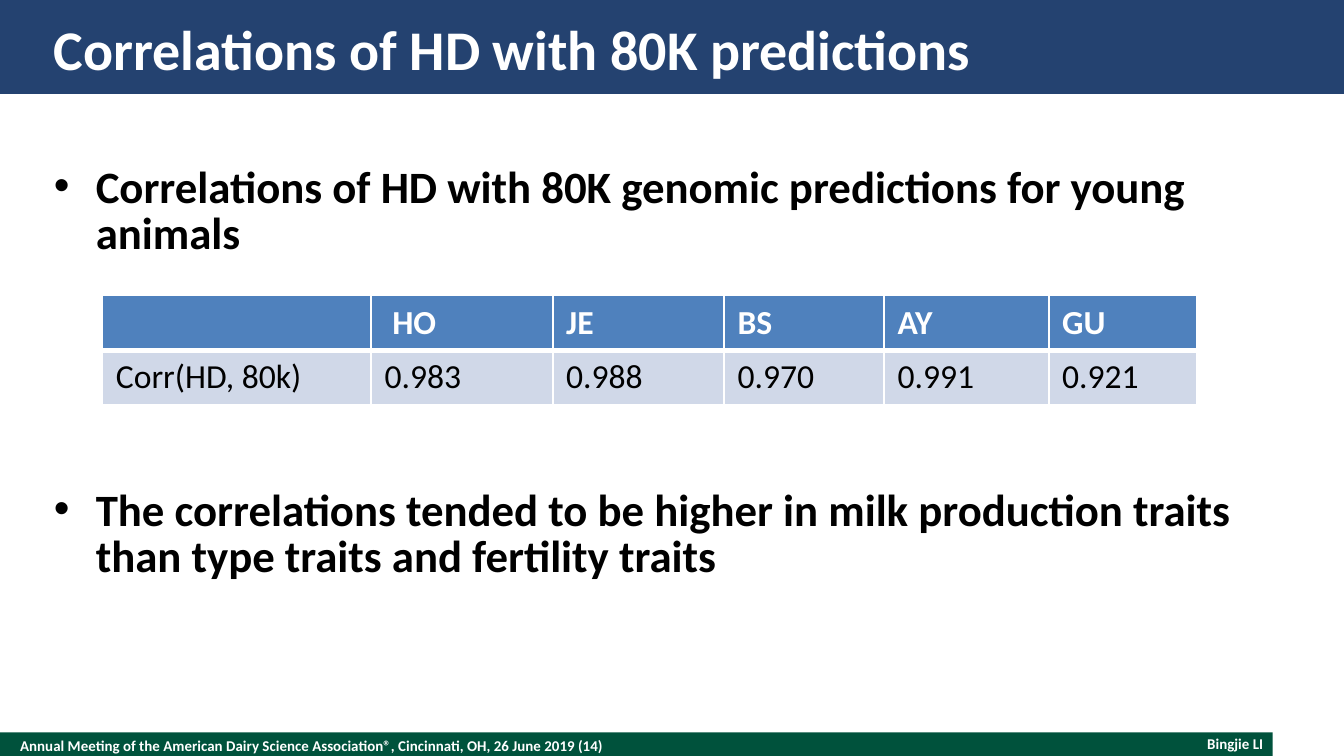
from lxml.etree import SubElement
from pptx import Presentation
from pptx.dml.color import RGBColor
from pptx.enum.shapes import MSO_SHAPE
from pptx.enum.text import MSO_ANCHOR, MSO_AUTO_SIZE, PP_ALIGN
from pptx.oxml.ns import qn
from pptx.util import Pt

COLORS = {
    "navy": "244270",
    "green": "00523C",
    "white": "FFFFFF",
    "black": "000000",
    "table_header": "4F81BD",
    "table_row": "D0D8E8",
}
TITLE = {"size": Pt(30), "bold": True, "color": "white"}
BULLET = {"size": Pt(24), "bold": True, "color": "black"}
FOOTER = {"size": Pt(8), "bold": True, "color": "white"}
HEADER_CELL = {"size": Pt(18), "bold": True, "color": "white"}
VALUE_CELL = {"size": Pt(18), "bold": False, "color": "black"}

COLUMN_WIDTHS = [144, 97.2, 91.8, 85.8, 88.2, 79.2]
ROWS = [
    ["", " HO", "JE", "BS", "AY", "GU"],
    ["Corr(HD, 80k)", "0.983", "0.988", "0.970", "0.991", "0.921"],
]
BULLETS = [
    "Correlations of HD with 80K genomic predictions for young animals",
    "The correlations tended to be higher in milk production traits "
    "than type traits and fertility traits",
]


def color(name):
    return RGBColor.from_string(COLORS[name])


def format_font(font, values):
    font.name = "Calibri"
    for name, value in values.items():
        if name == "color":
            font.color.rgb = color(value)
        else:
            setattr(font, name, value)


def place(shape, box):
    for name, value in zip(("left", "top", "width", "height"), box):
        setattr(shape, name, Pt(value))


def format_frame(frame, anchor):
    values = {
        "word_wrap": True, "auto_size": MSO_AUTO_SIZE.NONE, "vertical_anchor": anchor,
        "margin_left": 0, "margin_top": 0, "margin_right": 0, "margin_bottom": 0,
    }
    for name, value in values.items():
        setattr(frame, name, value)


def write_line(shape, text, values, alignment=PP_ALIGN.LEFT):
    format_frame(shape.text_frame, MSO_ANCHOR.MIDDLE)
    paragraph = shape.text_frame.paragraphs[0]
    paragraph.alignment = alignment
    run = paragraph.add_run()
    run.text = text
    format_font(run.font, values)


def add_bar(slide, box, fill):
    bar = slide.shapes.add_shape(MSO_SHAPE.RECTANGLE, *map(Pt, box))
    bar.shadow.inherit = False
    bar.fill.solid()
    bar.fill.fore_color.rgb = color(fill)
    bar.line.fill.background()


def bring_to_front(slide, shape):
    slide.shapes._spTree.append(shape._element)


def add_header(slide, box):
    left, top, width, height = box
    add_bar(slide, box, "navy")
    title = slide.shapes.title
    bring_to_front(slide, title)
    place(title, (left + 28.8, top + 7.2, width - 57.6, 37.4))
    write_line(title, "Correlations of HD with 80K predictions", TITLE)


def add_footer(slide, box):
    left, top, width, height = box
    add_bar(slide, box, "green")
    labels = [
        ("Annual Meeting of the American Dairy Science Association®, "
         "Cincinnati, OH, 26 June 2019 (14)",
         (left + 10.8, top, 468, height), PP_ALIGN.LEFT),
        ("Bingjie LI", (left + width - 163.4, top + 1.4, 158.4, 9.4), PP_ALIGN.RIGHT),
    ]
    for text, label_box, alignment in labels:
        label = slide.shapes.add_textbox(*map(Pt, label_box))
        write_line(label, text, FOOTER, alignment)


def add_bullets(slide, box):
    body = slide.placeholders[1]
    bring_to_front(slide, body)
    place(body, box)
    frame = body.text_frame
    format_frame(frame, MSO_ANCHOR.TOP)
    frame.text = "\n".join(BULLETS)
    for paragraph in frame.paragraphs:
        properties = paragraph._p.get_or_add_pPr()
        properties.set("marL", str(Pt(22.5)))
        properties.set("indent", str(Pt(-22.5)))
        SubElement(properties, qn("a:buChar"), char="•")
        paragraph.line_spacing = Pt(25)
        paragraph.space_before = Pt(0)
        format_font(paragraph.runs[0].font, BULLET)
    # Room for the table between the two bullets
    frame.paragraphs[0].space_after = Pt(123)


def add_borders(cell, bottom_width):
    properties = cell._tc.get_or_add_tcPr()
    for side, width in (("L", 1), ("R", 1), ("T", 1), ("B", bottom_width)):
        line = SubElement(properties, qn(f"a:ln{side}"), w=str(Pt(width)))
        fill = SubElement(line, qn("a:solidFill"))
        SubElement(fill, qn("a:srgbClr"), val=COLORS["white"])


def add_correlation_table(slide, box):
    table = slide.shapes.add_table(len(ROWS), len(COLUMN_WIDTHS), *map(Pt, box)).table
    for column, width in zip(table.columns, COLUMN_WIDTHS):
        column.width = Pt(width)
    styles = [("table_header", HEADER_CELL, 3), ("table_row", VALUE_CELL, 1)]
    for row_index, (fill, font, bottom_width) in enumerate(styles):
        for column_index, text in enumerate(ROWS[row_index]):
            cell = table.cell(row_index, column_index)
            cell.text = text
            format_font(cell.text_frame.paragraphs[0].font, font)
            for run in cell.text_frame.paragraphs[0].runs:
                format_font(run.font, font)
            add_borders(cell, bottom_width)
            cell.fill.solid()
            cell.fill.fore_color.rgb = color(fill)


def main():
    presentation = Presentation()
    presentation.slide_width, presentation.slide_height = Pt(720), Pt(405)
    slide = presentation.slides.add_slide(presentation.slide_layouts[1])
    add_footer(slide, (0, 392.4, 681.8, 14.4))
    add_header(slide, (0, 0, 720, 50.4))
    add_bullets(slide, (28.8, 88.6, 662.4, 288))
    add_correlation_table(slide, (54.9, 158.4, sum(COLUMN_WIDTHS), 58.4))
    presentation.save("out.pptx")


if __name__ == "__main__":
    main()
